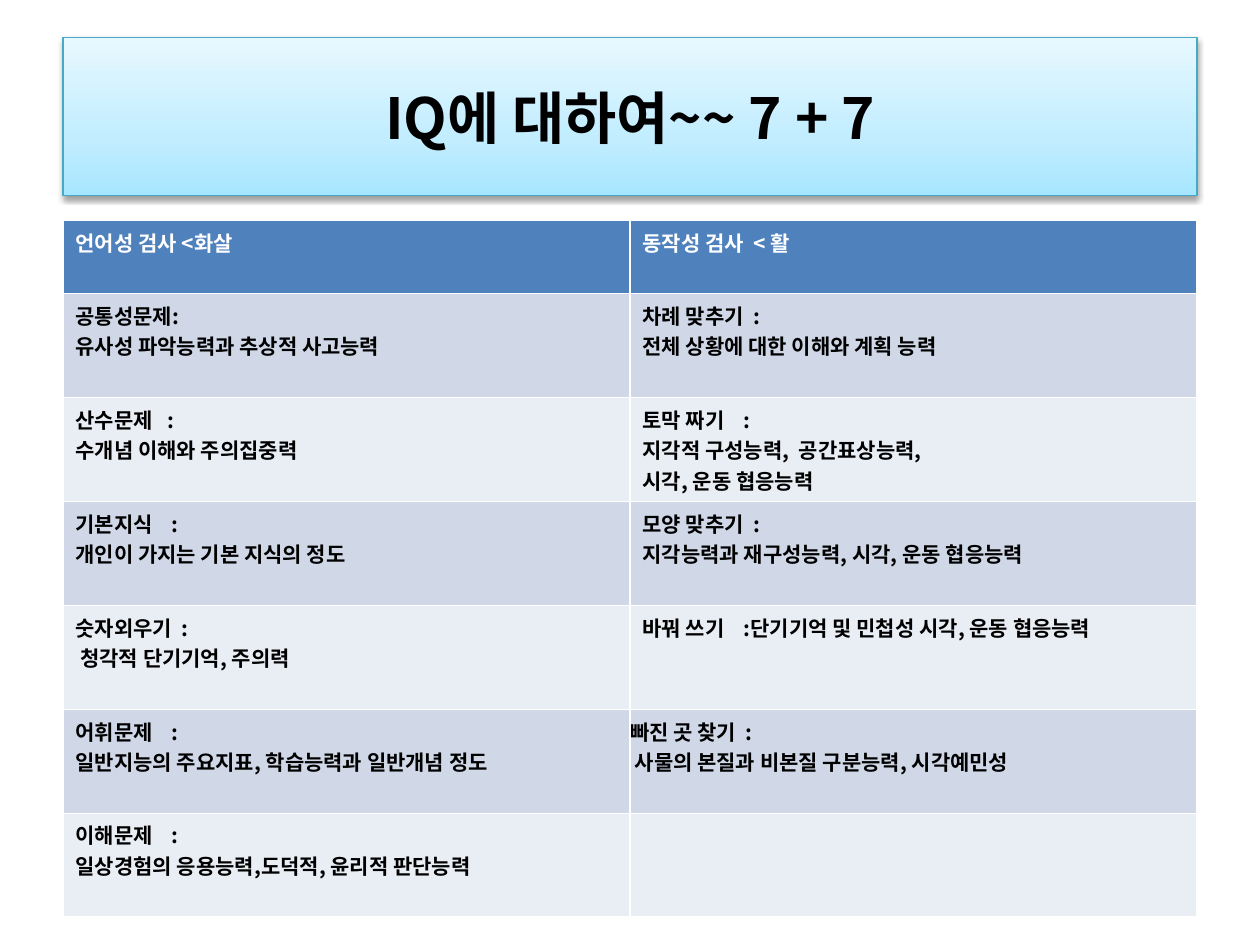
from copy import deepcopy

from lxml.etree import SubElement
from pptx import Presentation
from pptx.dml.color import RGBColor
from pptx.enum.text import MSO_ANCHOR, MSO_AUTO_SIZE, PP_ALIGN
from pptx.oxml.ns import qn
from pptx.util import Inches, Pt

FONT = "Noto Sans CJK KR"
HEADER_FILL = "4F81BD"
BAND_FILLS = ("E9EDF4", "D0D8E8")
TITLE_STOPS = ((0, "A7E6FF"), (0.35, "C1EDFF"), (1, "E7F8FF"))

TEST_ROWS = [
    (["언어성 검사 <화살"], ["동작성 검사  < 활"]),
    (["공통성문제:", "유사성 파악능력과 추상적 사고능력"],
     ["차례 맞추기  :", "전체 상황에 대한 이해와 계획 능력"]),
    (["산수문제   :", "수개념 이해와 주의집중력"],
     ["토막 짜기    :", "지각적 구성능력,  공간표상능력,", "시각, 운동 협응능력"]),
    (["기본지식    :", "개인이 가지는 기본 지식의 정도"],
     ["모양 맞추기  :", "지각능력과 재구성능력, 시각, 운동 협응능력"]),
    (["숫자외우기  :", " 청각적 단기기억, 주의력"],
     ["바꿔 쓰기    :단기기억 및 민첩성 시각, 운동 협응능력"]),
    (["어휘문제    :", "일반지능의 주요지표, 학습능력과 일반개념 정도"],
     ["빠진 곳 찾기  :", " 사물의 본질과 비본질 구분능력, 시각예민성"]),
    (["이해문제    :", "일상경험의 응용능력,도덕적, 윤리적 판단능력"], []),
]


def color(hex_value):
    return RGBColor.from_string(hex_value)


def add_run(paragraph, text, size, hex_value):
    run = paragraph.add_run()
    run.text = text
    run.font.size = Pt(size)
    run.font.bold = True
    run.font.name = FONT
    run.font.color.rgb = color(hex_value)
    SubElement(run.font._element, qn("a:ea"), typeface=FONT)


def fill_title_gradient(title):
    title.fill.gradient()
    title.fill.gradient_angle = 90
    stop_list = title._element.spPr.find(".//" + qn("a:gsLst"))
    stop_list.append(deepcopy(stop_list[-1]))
    for stop, (position, hex_value) in zip(title.fill.gradient_stops, TITLE_STOPS):
        stop.position = position
        stop.color.rgb = color(hex_value)


def add_title_shadow(title):
    title.shadow.inherit = False
    effects = title._element.spPr.find(qn("a:effectLst"))
    shadow = SubElement(effects, qn("a:outerShdw"), blurRad="40000",
                        dist="20000", dir="5400000", rotWithShape="0")
    shade = SubElement(shadow, qn("a:srgbClr"), val="000000")
    SubElement(shade, qn("a:alpha"), val="38000")


def format_title(title, text):
    title.left, title.top = Inches(0.5), Inches(0.3)
    title.width, title.height = Inches(9), Inches(1.25)
    fill_title_gradient(title)
    title.line.color.rgb = color("46AAC5")
    title.line.width = Pt(0.75)
    add_title_shadow(title)
    frame = title.text_frame
    frame.auto_size = MSO_AUTO_SIZE.NONE
    frame.vertical_anchor = MSO_ANCHOR.MIDDLE
    frame.paragraphs[0].alignment = PP_ALIGN.CENTER
    add_run(frame.paragraphs[0], text, 32.4, "000000")


def fill_cell(cell, lines, fill_hex, text_hex):
    cell.fill.solid()
    cell.fill.fore_color.rgb = color(fill_hex)
    frame = cell.text_frame
    for index, line in enumerate(lines):
        paragraph = frame.add_paragraph() if index else frame.paragraphs[0]
        add_run(paragraph, line, 12, text_hex)


def add_test_table(slide):
    tests = slide.shapes.add_table(len(TEST_ROWS), 2, Inches(0.5), Inches(1.75),
                                   Inches(9), Inches(5.53)).table
    for row_index, row_texts in enumerate(TEST_ROWS):
        is_header = row_index == 0
        tests.rows[row_index].height = Inches(0.58 if is_header else 0.825)
        fill_hex = HEADER_FILL if is_header else BAND_FILLS[row_index % 2]
        text_hex = "FFFFFF" if is_header else "000000"
        for column_index, lines in enumerate(row_texts):
            fill_cell(tests.cell(row_index, column_index), lines, fill_hex, text_hex)
    tests.cell(5, 1).margin_left = 0


def main():
    presentation = Presentation()
    presentation.slide_width, presentation.slide_height = Inches(10), Inches(7.5)
    slide = presentation.slides.add_slide(presentation.slide_layouts[5])
    format_title(slide.shapes.title, "IQ에 대하여~~ 7 + 7")
    add_test_table(slide)
    presentation.save("out.pptx")


if __name__ == "__main__":
    main()
